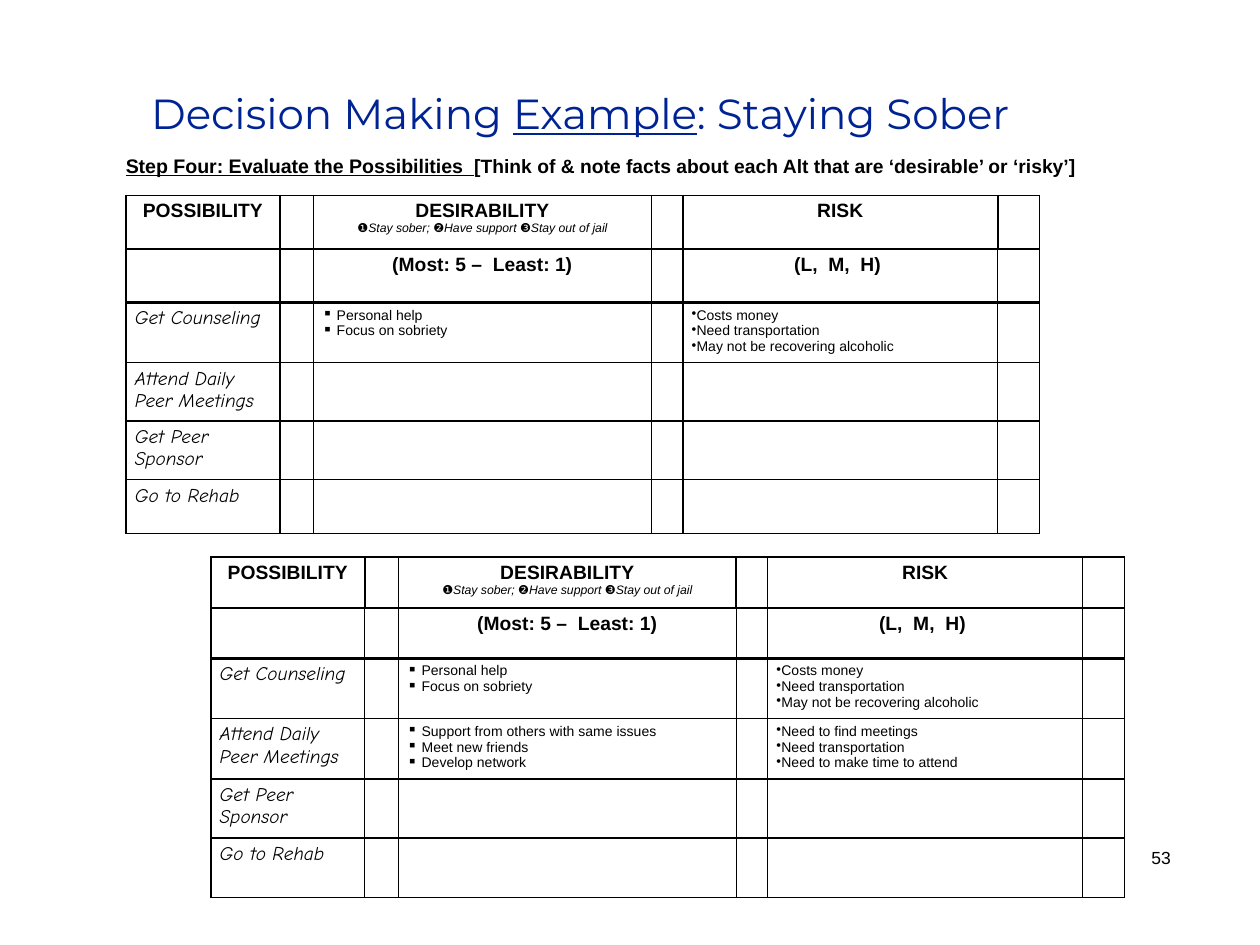
"""Build the decision making slide with two evaluation tables."""
import pptx
import pptx.dml.color
import pptx.enum.text
import pptx.oxml
import pptx.oxml.ns
import pptx.util
from lxml import etree

Pt = pptx.util.Pt
ALIGN = pptx.enum.text.PP_ALIGN
COLORS = {"title": "002394", "ink": "000000"}
COLUMNS = [88, 19.2, 193, 18, 180, 24]
HEADER = [
    ("POSSIBILITY", "DESIRABILITY", "RISK"),
    ("", "(Most: 5 –  Least: 1)", "(L,  M,  H) "),
]
GOALS = "❶Stay sober; ❷Have support ❸Stay out of jail"
OPTIONS = ["Get Counseling", "Attend Daily Peer Meetings", "Get Peer Sponsor", "Go to Rehab"]
COUNSELING = (
    ["Personal help", "Focus on sobriety"],
    ["Costs money", "Need transportation", "May not be recovering alcoholic"],
)
MEETINGS = (
    ["Support from others with same issues", "Meet new friends", "Develop network"],
    ["Need to find meetings", "Need transportation", "Need to make time to attend"],
)
TABLES = [
    {"left": 120.5, "top": 318.4, "rows": [29, 28.7, 32.6, 33.1, 33.7, 34.2],
     "notes": [COUNSELING, MEETINGS]},
    {"left": 72, "top": 111.6, "rows": [30.8, 30.4, 34.2, 33.2, 33.7, 30.8],
     "notes": [COUNSELING]},
]


def write(para, text, size=11, font="Arial", color="ink", bold=False, italic=False,
          underline=False, align=ALIGN.LEFT, bullet=None):
    para.alignment = align
    if bullet:
        properties = para._p.get_or_add_pPr()
        properties.set("marL", "0")
        properties.set("indent", "0")
        mark = etree.SubElement(properties, pptx.oxml.ns.qn("a:buChar"))
        mark.set("char", bullet)
        if bullet == "▪":
            stops = etree.SubElement(properties, pptx.oxml.ns.qn("a:tabLst"))
            stop = etree.SubElement(stops, pptx.oxml.ns.qn("a:tab"))
            stop.set("pos", str(Pt(18)))
            stop.set("algn", "l")
    span = para.add_run()
    span.text = text
    span.font.size = Pt(size)
    span.font.name = font
    span.font.bold = bold
    span.font.italic = italic
    span.font.underline = underline
    span.font.color.rgb = pptx.dml.color.RGBColor.from_string(COLORS[color])


def draw_borders(cell, widths):
    properties = cell._tc.get_or_add_tcPr()
    for index, (side, width) in enumerate(widths.items()):
        line = pptx.oxml.parse_xml(
            f'<a:ln{side} {pptx.oxml.ns.nsdecls("a")} w="{Pt(width)}"><a:solidFill>'
            f'<a:srgbClr val="{COLORS["ink"]}"/></a:solidFill></a:ln{side}>')
        properties.insert(index, line)


deck = pptx.Presentation()
deck.slide_width, deck.slide_height = Pt(720), Pt(540)
page = deck.slides.add_slide(deck.slide_layouts[6])

paras = {}
for name, left, top, width, height in [
    ("title", 12.2, 41.8, 645, 45.4),
    ("number", 563.8, 480.2, 112.3, 27.4),
    ("step", 64.8, 84.2, 571, 34.6),
]:
    box = page.shapes.add_textbox(Pt(left), Pt(top), Pt(width), Pt(height))
    box.text_frame.word_wrap = True
    if name == "title":
        box.text_frame.vertical_anchor = pptx.enum.text.MSO_ANCHOR.MIDDLE
    paras[name] = box.text_frame.paragraphs[0]

for text, underline in [("Decision Making ", False), ("Example", True), (": Staying Sober ", False)]:
    write(paras["title"], text, size=24, font="Montserrat", color="title",
          underline=underline, align=ALIGN.CENTER)
write(paras["number"], "53", size=10, align=ALIGN.RIGHT)
write(paras["step"], "Step Four: Evaluate the Possibilities  ", size=11.2, bold=True, underline=True)
write(paras["step"], "[Think of & note facts about each Alt that are ‘desirable’ or ‘risky’]", bold=True)

for layout in TABLES:
    heights = layout["rows"]
    table = page.shapes.add_table(
        len(heights), len(COLUMNS), Pt(layout["left"]), Pt(layout["top"]),
        Pt(sum(COLUMNS)), Pt(sum(heights))).table
    table.first_row = table.horz_banding = False
    for column, width in zip(table.columns, COLUMNS):
        column.width = Pt(width)
    for row, height in zip(table.rows, heights):
        row.height = Pt(height)

    for row in range(len(heights)):
        for column in range(len(COLUMNS)):
            cell = table.cell(row, column)
            cell.fill.background()
            cell.margin_left = cell.margin_right = Pt(5.04)
            cell.margin_top = cell.margin_bottom = Pt(2.88)
            sides = [1 if row == 0 or edge % 2 == 0 else 0.75 for edge in (column, column + 1)]
            draw_borders(cell, {"L": sides[0], "R": sides[1],
                                "T": 2 if row == 2 else 1, "B": 2 if row == 1 else 1})

    for row, labels in enumerate(HEADER):
        for column, label in zip((0, 2, 4), labels):
            if label:
                write(table.cell(row, column).text_frame.paragraphs[0], label,
                      bold=True, align=ALIGN.CENTER)
    write(table.cell(0, 2).text_frame.add_paragraph(), GOALS, size=7, italic=True, align=ALIGN.CENTER)

    for row, option in enumerate(OPTIONS, start=2):
        write(table.cell(row, 0).text_frame.paragraphs[0], option, font="Comic Neue", italic=True)
    for row, notes in enumerate(layout["notes"], start=2):
        for column, bullet, gap, lines in zip((2, 4), "▪•", (" ", ""), notes):
            frame = table.cell(row, column).text_frame
            for index, line in enumerate(lines):
                para = frame.add_paragraph() if index else frame.paragraphs[0]
                write(para, gap + line, size=8, bullet=bullet)

deck.save("out.pptx")
